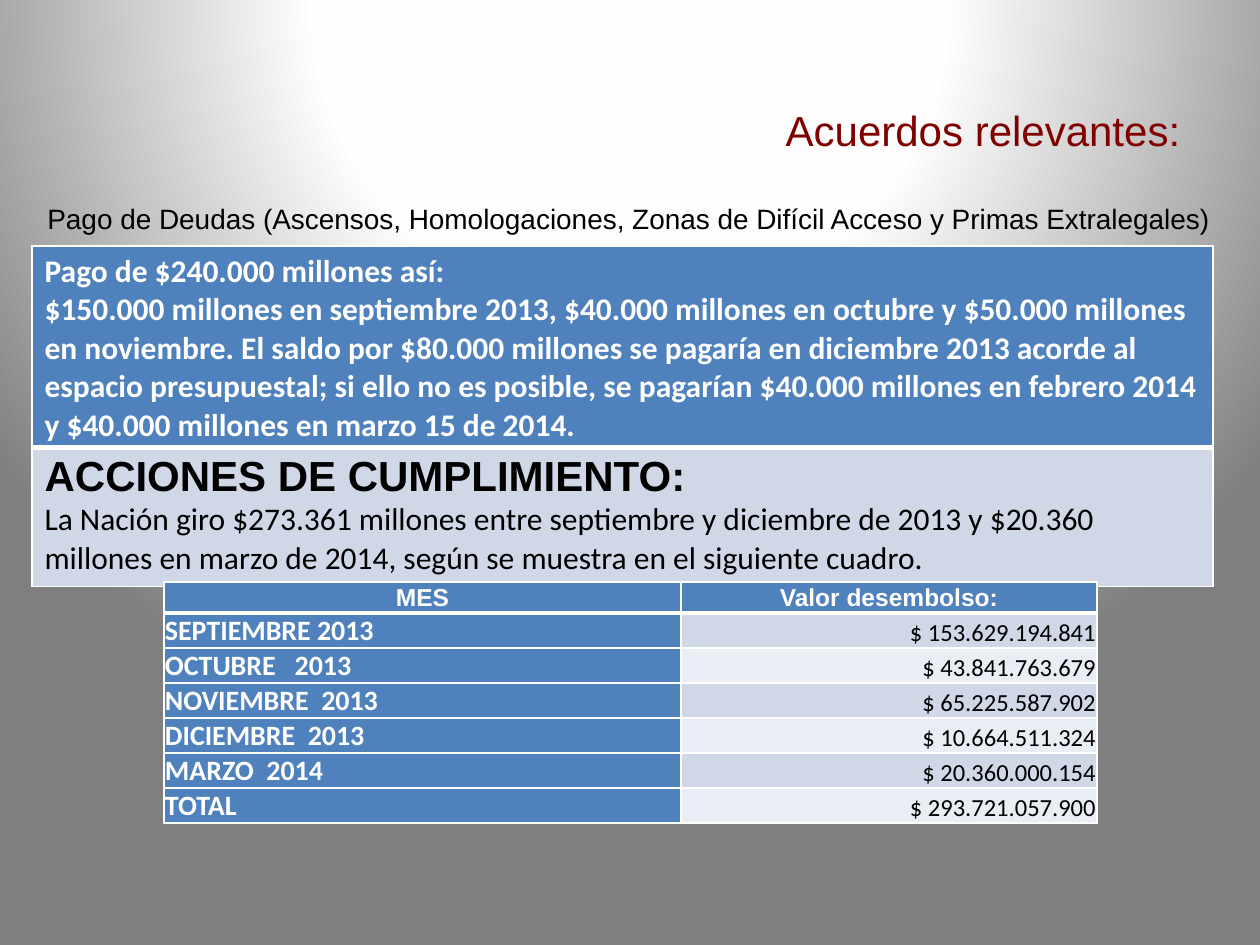
import pptx
import pptx.util
import pptx.dml.color
import pptx.enum.text
import pptx.oxml
import pptx.oxml.ns

EMU_PER_PX = 914400 / 126
RGBColor = pptx.dml.color.RGBColor
ALIGN = pptx.enum.text.PP_ALIGN
ANCHOR = pptx.enum.text.MSO_ANCHOR

MAROON = RGBColor(0x80, 0x00, 0x00)
BLACK = RGBColor(0x00, 0x00, 0x00)
WHITE = RGBColor(0xFF, 0xFF, 0xFF)
BLUE = RGBColor(0x4F, 0x81, 0xBD)
PALE_BLUE = RGBColor(0xD0, 0xD8, 0xE8)
PALER_BLUE = RGBColor(0xE9, 0xED, 0xF4)
BACKGROUND_STOPS = [(0, "FFFFFF"), (40, "FEFEFE"), (100, "7F7F7F")]

TITLE = {"name": "Arial", "size": 24, "bold": False, "color": MAROON}
SUBTITLE = {"name": "Arial", "size": 16, "bold": False, "color": BLACK}
AGREEMENT = {"name": "Calibri", "size": 18, "bold": True, "color": WHITE}
ACTIONS_HEADING = {"name": "Arial", "size": 24, "bold": True, "color": BLACK}
ACTIONS = {"name": "Calibri", "size": 18, "bold": False, "color": BLACK}
HEADER = {"name": "Arial", "size": 14, "bold": True, "color": WHITE}
MONTH = {"name": "Calibri", "size": 16, "bold": True, "color": WHITE}
AMOUNT = {"name": "Calibri", "size": 14, "bold": False, "color": BLACK}

AGREEMENT_ROWS = [
    (BLUE, 3, [
        ("Pago de $240.000 millones así:", AGREEMENT),
        ("$150.000 millones en septiembre 2013, $40.000 millones en octubre y "
         "$50.000 millones en noviembre. El saldo por $80.000 millones se pagaría "
         "en diciembre 2013 acorde al espacio presupuestal; si ello no es posible, "
         "se pagarían $40.000 millones en febrero 2014 y $40.000 millones en "
         "marzo 15 de 2014.", AGREEMENT)]),
    (PALE_BLUE, 1, [
        ("ACCIONES DE CUMPLIMIENTO:", ACTIONS_HEADING),
        ("La Nación giro $273.361 millones entre septiembre y diciembre de 2013 y "
         "$20.360 millones en marzo de 2014, según se muestra en el siguiente "
         "cuadro.", ACTIONS)]),
]
PAYMENT_HEADERS = ["MES", "Valor desembolso:"]
PAYMENTS = [
    ("SEPTIEMBRE 2013", "$ 153.629.194.841"),
    ("OCTUBRE   2013", "$ 43.841.763.679"),
    ("NOVIEMBRE  2013", "$ 65.225.587.902"),
    ("DICIEMBRE  2013", "$ 10.664.511.324"),
    ("MARZO  2014", "$ 20.360.000.154"),
    ("TOTAL", "$ 293.721.057.900"),
]


def px(length):
    return pptx.util.Emu(round(length * EMU_PER_PX))


def write(text_frame, lines, alignment=ALIGN.LEFT):
    for index, (text, style) in enumerate(lines):
        paragraph = text_frame.paragraphs[0] if index == 0 else text_frame.add_paragraph()
        paragraph.alignment = alignment
        run = paragraph.add_run()
        run.text = text
        values = {"name": style["name"], "size": pptx.util.Pt(style["size"]),
                  "bold": style["bold"]}
        for attribute, value in values.items():
            setattr(run.font, attribute, value)
        run.font.color.rgb = style["color"]


def paint_background(slide):
    slide.background.fill.solid()
    properties = slide.element.xpath(".//p:bgPr")[0]
    stops = "".join(f'<a:gs pos="{position * 1000}"><a:srgbClr val="{color}"/></a:gs>'
                    for position, color in BACKGROUND_STOPS)
    gradient = pptx.oxml.parse_xml(
        f'<a:gradFill {pptx.oxml.ns.nsdecls("a")} rotWithShape="1"><a:gsLst>{stops}</a:gsLst>'
        '<a:path path="circle"><a:fillToRect l="50000" t="-80000" r="50000" b="180000"/>'
        '</a:path></a:gradFill>')
    properties.replace(properties[0], gradient)


def add_text(slide, box, text, style, alignment, anchor):
    text_frame = slide.shapes.add_textbox(*map(px, box)).text_frame
    text_frame.word_wrap = True
    text_frame.vertical_anchor = anchor
    write(text_frame, [(text, style)], alignment)


def add_table(slide, box, column_widths, row_heights):
    table = slide.shapes.add_table(len(row_heights), len(column_widths),
                                   *map(px, box)).table
    for column, width in zip(table.columns, column_widths):
        column.width = px(width)
    for row, height in zip(table.rows, row_heights):
        row.height = px(height)
    return table


def format_cell(cell, color, bottom_width=1):
    # Borders come before the fill in the cell properties
    properties = cell._tc.get_or_add_tcPr()
    for side in "LRTB":
        width = pptx.util.Pt(bottom_width if side == "B" else 1)
        properties.append(pptx.oxml.parse_xml(
            f'<a:ln{side} {pptx.oxml.ns.nsdecls("a")} w="{width}"><a:solidFill>'
            f'<a:srgbClr val="{WHITE}"/></a:solidFill></a:ln{side}>'))
    cell.fill.solid()
    cell.fill.fore_color.rgb = color


def add_agreement_table(slide, box):
    first_height = 201
    table = add_table(slide, box, [box[2]], [first_height, box[3] - first_height])
    for index, (color, bottom_width, lines) in enumerate(AGREEMENT_ROWS):
        cell = table.cell(index, 0)
        format_cell(cell, color, bottom_width)
        write(cell.text_frame, lines)


def add_payment_table(slide, box):
    row_height, month_width = 35, 517
    header_height = box[3] - row_height * len(PAYMENTS)
    table = add_table(slide, box, [month_width, box[2] - month_width],
                      [header_height] + [row_height] * len(PAYMENTS))
    for row, texts in enumerate([PAYMENT_HEADERS] + PAYMENTS):
        band = PALE_BLUE if row % 2 else PALER_BLUE
        if row == 0:
            looks = [(HEADER, BLUE, ALIGN.CENTER, ANCHOR.MIDDLE)] * 2
        else:
            looks = [(MONTH, BLUE, ALIGN.JUSTIFY, ANCHOR.MIDDLE),
                     (AMOUNT, band, ALIGN.RIGHT, ANCHOR.BOTTOM)]
        for column, (text, look) in enumerate(zip(texts, looks)):
            style, color, alignment, anchor = look
            cell = table.cell(row, column)
            format_cell(cell, color, 1 if row else 3)
            layout = {"margin_left": px(1), "margin_right": px(1), "margin_top": px(1),
                      "margin_bottom": 0, "vertical_anchor": anchor}
            for attribute, value in layout.items():
                setattr(cell, attribute, value)
            write(cell.text_frame, [(text, style)], alignment)


def main():
    presentation = pptx.Presentation()
    presentation.slide_width, presentation.slide_height = px(1260), px(945)
    slide = presentation.slides.add_slide(presentation.slide_layouts[6])
    paint_background(slide)

    # Title and subtitle
    add_text(slide, (740, 96, 486, 67), "Acuerdos relevantes:", TITLE,
             ALIGN.CENTER, ANCHOR.MIDDLE)
    add_text(slide, (35, 195, 1225, 47),
             "Pago de Deudas (Ascensos, Homologaciones, Zonas de Difícil Acceso y "
             "Primas Extralegales)", SUBTITLE, ALIGN.LEFT, ANCHOR.TOP)

    # Agreement text and payments by month
    add_agreement_table(slide, (32, 246, 1181, 328))
    add_payment_table(slide, (164, 582, 933, 241))
    presentation.save("out.pptx")


if __name__ == "__main__":
    main()
